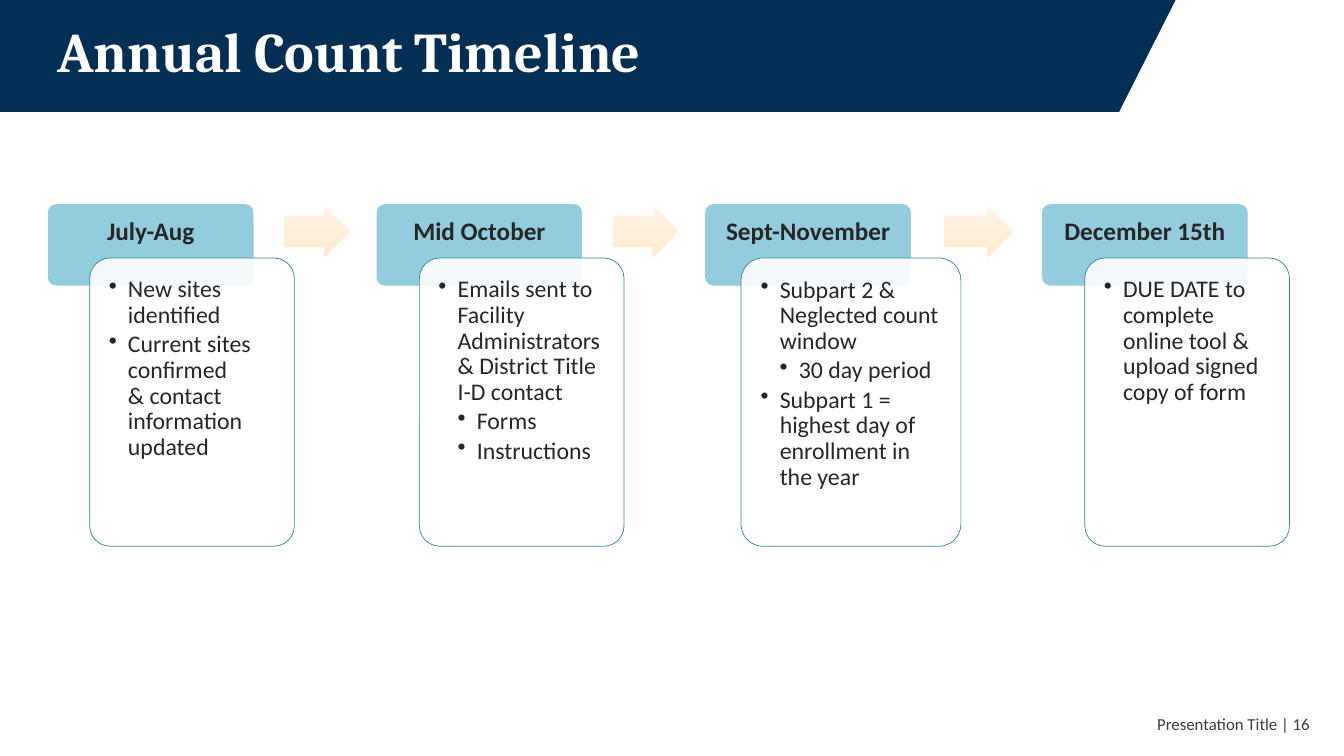
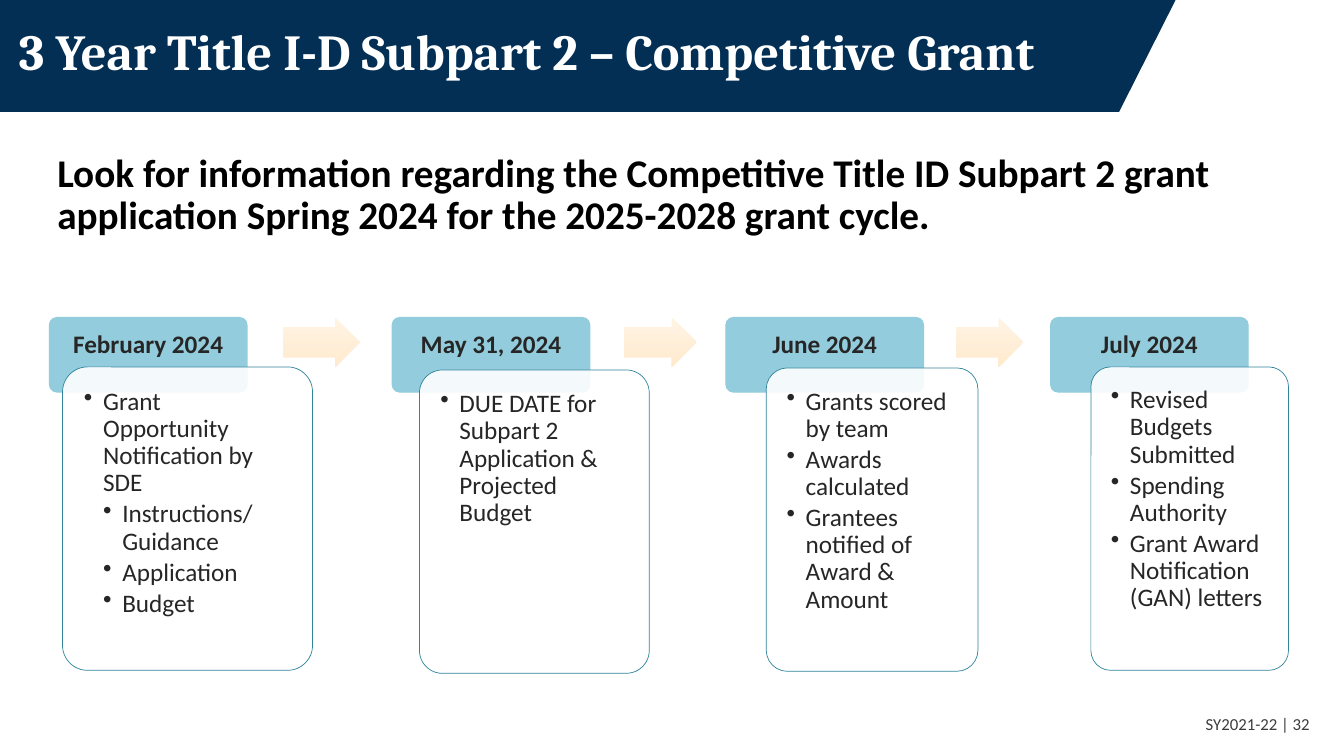
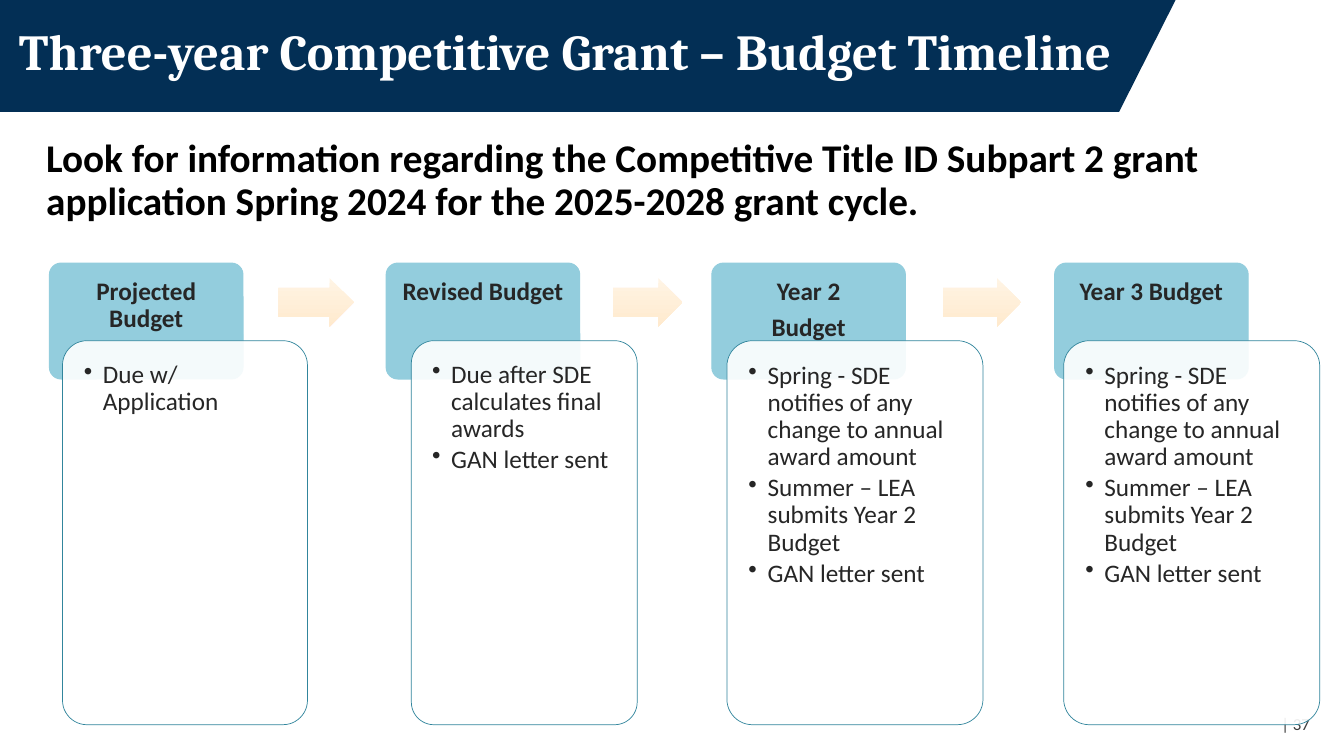
from dataclasses import dataclass
from typing import NamedTuple

from lxml.etree import SubElement
from pptx import Presentation
from pptx.dml.color import RGBColor
from pptx.enum.shapes import MSO_SHAPE
from pptx.enum.text import MSO_ANCHOR, PP_ALIGN
from pptx.oxml.ns import qn
from pptx.util import Emu, Pt

SCALE = 9144


@dataclass(frozen=True)
class Theme:
    band: str = "032F55"
    white: str = "FFFFFF"
    black: str = "000000"
    footer: str = "3C3C3C"
    head: str = "93CDDD"
    card_line: str = "31859C"
    text: str = "262626"
    arrow_top: str = "FFF4E4"
    arrow_bottom: str = "FFEACE"
    title_font: str = "Cambria"
    body_font: str = "Calibri"
    footer_size: int = 12
    head_size: int = 18
    intro_size: int = 28
    leading: float = 0.9


class Item(NamedTuple):
    text: str
    level: int = 0


class Step(NamedTuple):
    label: str
    head_x: int
    card_x: int
    card_w: int
    items: list[Item]
    drop: int = 0


class Timeline(NamedTuple):
    head_y: int
    head_w: int
    head_h: int
    card_y: int
    card_h: int
    arrow_y: int
    arrow_h: int
    item_size: int
    inset: int
    steps: list[Step]


class Page(NamedTuple):
    title: str
    title_x: int
    title_size: int
    footer: str
    timeline: Timeline
    intro_at: tuple[int, int] | None = None


T = Theme()
INTRO = ("Look for information regarding the Competitive Title ID Subpart 2 grant "
         "application Spring 2024 for the 2025-2028 grant cycle.")


def px(n: float) -> Emu:
    return Emu(round(n) * SCALE)


def rgb(color: str) -> RGBColor:
    return RGBColor.from_string(color)


def style(p, size: int, color: str, bold: bool = False, font: str = T.body_font) -> None:
    p.line_spacing = T.leading
    for r in p.runs:
        r.font.name = font
        r.font.size = Pt(size)
        r.font.bold = bold
        r.font.color.rgb = rgb(color)


def add_text(s, text: str, x: int, y: int, w: int, h: int, anchor=MSO_ANCHOR.TOP):
    tf = s.shapes.add_textbox(px(x), px(y), px(w), px(h)).text_frame
    tf.word_wrap = True
    tf.vertical_anchor = anchor
    tf.text = text
    return tf.paragraphs[0]


def add_box(s, kind, x: float, y: int, w: float, h: int):
    sp = s.shapes.add_shape(kind, px(x), px(y), px(w), px(h))
    sp.shadow.inherit = False
    return sp


def add_round_box(s, x: int, y: int, w: int, h: int, fill: str, line: str,
                  width: float, inset: int):
    sp = add_box(s, MSO_SHAPE.ROUNDED_RECTANGLE, x, y, w, h)
    sp.adjustments[0] = 0.1
    sp.fill.solid()
    sp.fill.fore_color.rgb = rgb(fill)
    sp.line.color.rgb = rgb(line)
    sp.line.width = Pt(width)
    tf = sp.text_frame
    tf.word_wrap = True
    tf.vertical_anchor = MSO_ANCHOR.TOP
    tf.margin_left = tf.margin_right = tf.margin_top = tf.margin_bottom = px(inset)
    return sp


def add_head(s, step: Step, t: Timeline) -> None:
    sp = add_round_box(s, step.head_x, t.head_y, t.head_w, t.head_h,
                       T.head, T.head, 0.75, 12)
    tf = sp.text_frame
    tf.text = step.label
    for p in tf.paragraphs:
        p.alignment = PP_ALIGN.CENTER
        p.space_after = Pt(0.35 * T.head_size)
        style(p, T.head_size, T.text, True)


def add_card(s, step: Step, t: Timeline) -> None:
    sp = add_round_box(s, step.card_x, t.card_y + step.drop, step.card_w, t.card_h,
                       T.white, T.card_line, 0.5, t.inset)
    color = sp.fill._xPr.find(qn("a:solidFill"))[0]
    SubElement(color, qn("a:alpha")).set("val", "90000")
    tf = sp.text_frame
    for i, item in enumerate(step.items):
        p = tf.add_paragraph() if i else tf.paragraphs[0]
        p.text = item.text
        p.level = item.level
        p.alignment = PP_ALIGN.LEFT
        pPr = p._p.get_or_add_pPr()
        pPr.set("marL", str(px(19 * (item.level + 1))))
        pPr.set("indent", str(px(-19)))
        SubElement(pPr, qn("a:buChar")).set("char", "•")
        p.space_after = Pt(0.15 * t.item_size)
        style(p, t.item_size, T.text)


def add_arrow(s, step: Step, following: Step, t: Timeline) -> None:
    start = step.head_x + t.head_w
    gap = following.head_x - start
    sp = add_box(s, MSO_SHAPE.RIGHT_ARROW, start + 0.25 * gap, t.arrow_y,
                 0.53 * gap, t.arrow_h)
    sp.adjustments[0] = 0.6
    sp.adjustments[1] = 0.5
    sp.fill.gradient()
    sp.fill.gradient_angle = 270
    for stop, color in zip(sp.fill.gradient_stops, (T.arrow_top, T.arrow_bottom)):
        stop.color.rgb = rgb(color)
    sp.line.fill.background()


def add_timeline(s, t: Timeline) -> None:
    for i, step in enumerate(t.steps):
        add_head(s, step, t)
        add_card(s, step, t)
        if i + 1 < len(t.steps):
            add_arrow(s, step, t.steps[i + 1], t)


def add_frame(s, footer: str) -> None:
    fb = s.shapes.build_freeform(0, 0, scale=SCALE)
    fb.add_line_segments([(1166, 0), (1110, 111), (0, 111)], close=True)
    band = fb.convert_to_shape()
    band.shadow.inherit = False
    band.fill.solid()
    band.fill.fore_color.rgb = rgb(T.band)
    band.line.fill.background()
    p = add_text(s, footer, 1009, 699, 300, 40, MSO_ANCHOR.MIDDLE)
    p.alignment = PP_ALIGN.RIGHT
    style(p, T.footer_size, T.footer)


def add_page(prs, page: Page) -> None:
    s = prs.slides.add_slide(prs.slide_layouts[6])
    add_frame(s, page.footer)
    add_timeline(s, page.timeline)
    if page.intro_at:
        p = add_text(s, INTRO, *page.intro_at, 1262, 95)
        style(p, T.intro_size, T.black, True)
    p = add_text(s, page.title, page.title_x, 0, 1150, 108, MSO_ANCHOR.MIDDLE)
    style(p, page.title_size, T.white, True, T.title_font)


def yearly_items() -> list[Item]:
    return [Item("Spring - SDE notifies of any change to annual award amount"),
            Item("Summer – LEA submits Year 2 Budget"),
            Item("GAN letter sent")]


COUNT = Timeline(203, 203, 80, 256, 286, 204, 51, 17, 13, [
    Step("July-Aug", 48, 89, 203, [
        Item("New sites identified"),
        Item("Current sites confirmed\v& contact information updated")]),
    Step("Mid October", 374, 416, 203, [
        Item("Emails sent to Facility Administrators & District Title I-D contact"),
        Item("Forms", 1),
        Item("Instructions", 1)]),
    Step("Sept-November", 700, 735, 218, [
        Item("Subpart 2 & Neglected count window"),
        Item("30 day period", 1),
        Item("Subpart 1 = highest day of enrollment in the year")]),
    Step("December 15th", 1034, 1076, 203, [
        Item("DUE DATE to complete online tool & upload signed copy of form")]),
])

GRANT = Timeline(315, 196, 74, 364, 301, 315, 49, 18, 14, [
    Step("February 2024", 49, 62, 248, [
        Item("Grant Opportunity Notification by SDE"),
        Item("Instructions/Guidance", 1),
        Item("Application", 1),
        Item("Budget", 1)]),
    Step("May 31, 2024", 389, 416, 228, [
        Item("DUE DATE for Subpart 2 Application & Projected Budget")], 3),
    Step("June 2024", 720, 760, 210, [
        Item("Grants scored by team"),
        Item("Awards calculated"),
        Item("Grantees notified of Award & Amount")], 1),
    Step("July 2024", 1042, 1082, 196, [
        Item("Revised Budgets Submitted"),
        Item("Spending Authority"),
        Item("Grant Award Notification (GAN) letters")]),
])

BUDGET = Timeline(261, 192, 115, 338, 381, 276, 48, 18, 14, [
    Step("Projected Budget", 49, 62, 243, [Item("Due w/ Application")]),
    Step("Revised Budget", 383, 408, 224, [
        Item("Due after SDE calculates final awards"),
        Item("GAN letter sent")]),
    Step("Year 2\nBudget", 706, 721, 254, yearly_items()),
    Step("Year 3 Budget", 1046, 1055, 254, yearly_items()),
])

PAGES = [
    Page("Annual Count Timeline", 47, 40, "Presentation Title | 16", COUNT),
    Page("3 Year Title I-D Subpart 2 – Competitive Grant", 9, 36, "SY2021-22 | 32",
         GRANT, (47, 147)),
    Page("Three-year Competitive Grant – Budget Timeline", 9, 36, "| 37",
         BUDGET, (36, 133)),
]


def main() -> None:
    prs = Presentation()
    prs.slide_width = px(1333)
    prs.slide_height = px(750)
    for page in PAGES:
        add_page(prs, page)
    prs.save("out.pptx")


if __name__ == "__main__":
    main()
